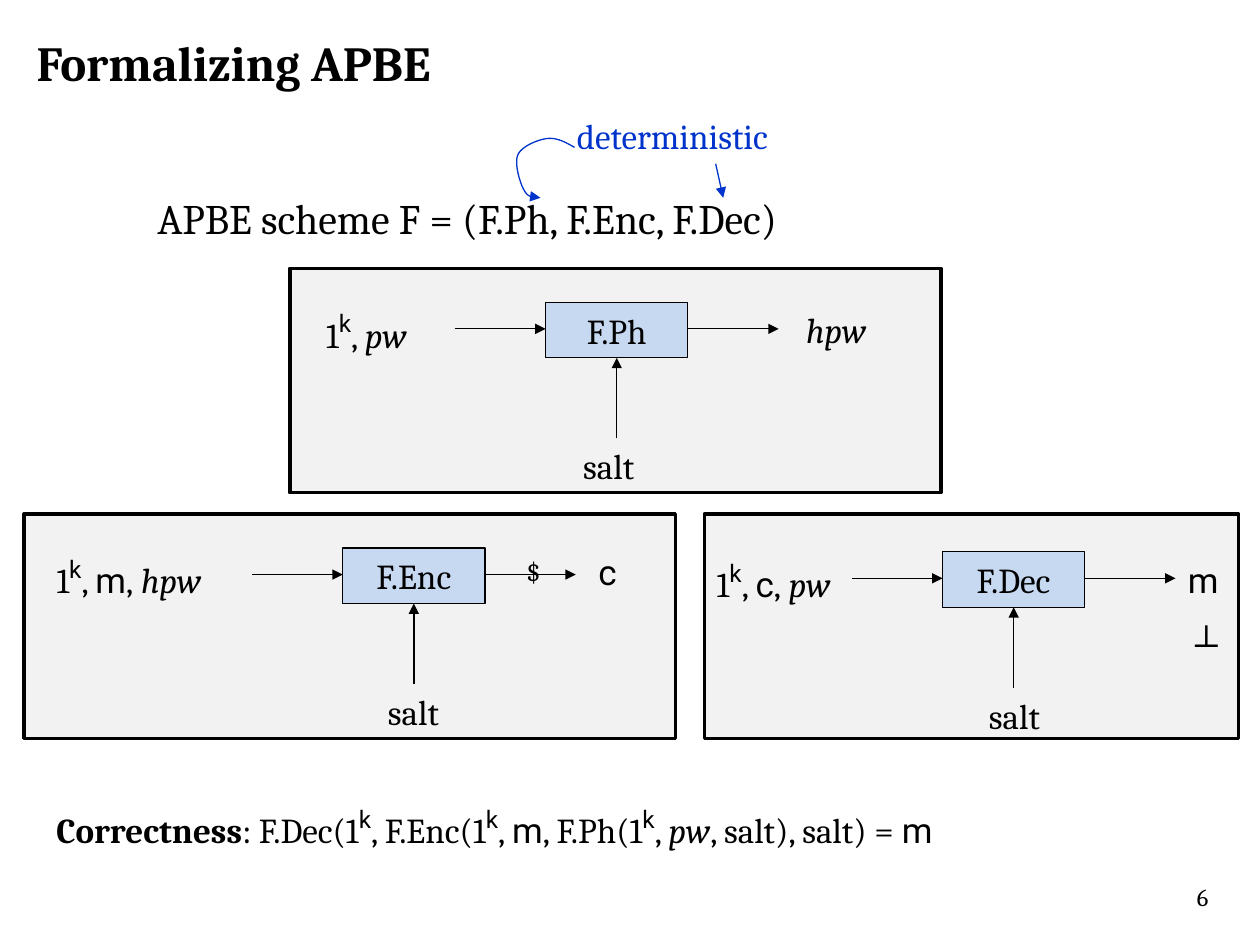
from lxml import etree
from pptx import Presentation
from pptx.dml.color import RGBColor
from pptx.enum.shapes import MSO_CONNECTOR, MSO_SHAPE
from pptx.enum.text import MSO_ANCHOR, MSO_AUTO_SIZE, PP_ALIGN
from pptx.oxml.ns import qn
from pptx.util import Inches, Pt

STRAIGHT = MSO_CONNECTOR.STRAIGHT
RECTANGLE = MSO_SHAPE.RECTANGLE
TOP = MSO_ANCHOR.TOP
NO_AUTO_SIZE = MSO_AUTO_SIZE.NONE
LEFT, CENTER = PP_ALIGN.LEFT, PP_ALIGN.CENTER

BLACK, BLUE = "000000", "0033CC"
PANEL_FILL, BOX_FILL = "F2F2F2", "C6D9F1"
SERIF, SANS = "Cambria", "Roboto"
BOX_WIDTH, TEXT_HEIGHT = 1.13, 0.44
ARROW_LENGTH = 0.72

SECURITY_PARAMETER = [("1", ""), ("k", "superscript"), (", ", "")]


def color(hex_string):
    return RGBColor.from_string(hex_string)


def curve_points(start, segments, steps=12):
    """Points along a chain of cubic curves, each (control, control, end)."""
    points = [start]
    for first, second, end in segments:
        for step in range(1, steps + 1):
            t = step / steps
            u = 1 - t
            points.append(tuple(
                u**3 * a + 3 * u * u * t * b + 3 * u * t * t * c + t**3 * d
                for a, b, c, d in zip(start, first, second, end)))
        start = end
    return points


class SlideBuilder:
    def __init__(self, slide):
        self.slide = slide
        self.shapes = slide.shapes

    def style_run(self, run, size=20, hex_color=BLACK, style=""):
        font = run.font
        font.name = SANS if style in ("sans", "superscript") else SERIF
        font.size = Pt(24 if style == "superscript" else size)
        font.color.rgb = color(hex_color)
        font.bold = style == "bold"
        font.italic = style == "italic"
        if style == "superscript":
            font._element.set("baseline", "36000")

    def add_runs(self, text_frame, parts, size=20, hex_color=BLACK, align=LEFT):
        """Fill a frame with plain text or with (text, style) parts."""
        if isinstance(parts, str):
            parts = [(parts, "")]
        paragraph = text_frame.paragraphs[0]
        paragraph.alignment = align
        for text, style in parts:
            run = paragraph.add_run()
            run.text = text
            self.style_run(run, size, hex_color, style)

    def title(self, text, left, top, width, height):
        title = self.shapes.title
        title.left, title.top = Inches(left), Inches(top)
        title.width, title.height = Inches(width), Inches(height)
        frame = title.text_frame
        frame.word_wrap = False
        frame.auto_size = NO_AUTO_SIZE
        frame.vertical_anchor = TOP
        self.add_runs(frame, [(text, "bold")], 28)

    def text(self, parts, left, top, width, height=TEXT_HEIGHT, size=20, hex_color=BLACK):
        box = self.shapes.add_textbox(
            Inches(left), Inches(top), Inches(width), Inches(height))
        box.text_frame.word_wrap = True
        self.add_runs(box.text_frame, parts, size, hex_color)

    def rectangle(self, left, top, width, height, fill, line_width, label=""):
        shape = self.shapes.add_shape(
            RECTANGLE, Inches(left), Inches(top), Inches(width), Inches(height))
        shape.shadow.inherit = False
        shape.fill.solid()
        shape.fill.fore_color.rgb = color(fill)
        shape.line.color.rgb = color(BLACK)
        shape.line.width = Pt(line_width)
        if label:
            self.add_runs(shape.text_frame, label, align=CENTER)

    def arrow_line(self, shape, hex_color):
        shape.line.color.rgb = color(hex_color)
        shape.line.width = Pt(0.75)
        line = shape.element.spPr.find(qn("a:ln"))
        etree.SubElement(line, qn("a:tailEnd"), type="triangle")

    def arrow(self, start, end, hex_color=BLACK):
        connector = self.shapes.add_connector(
            STRAIGHT, *(Inches(value) for value in (*start, *end)))
        self.arrow_line(connector, hex_color)
        etree.SubElement(connector.element.spPr, qn("a:effectLst"))

    def curved_arrow(self, points, hex_color):
        builder = self.shapes.build_freeform(
            *(Inches(value) for value in points[0]))
        builder.add_line_segments(
            [(Inches(x), Inches(y)) for x, y in points[1:]], close=False)
        shape = builder.convert_to_shape()
        shape.shadow.inherit = False
        shape.fill.background()
        self.arrow_line(shape, hex_color)

    def algorithm(self, name, left, top, inputs, input_left, input_width, salt_offset):
        """A named box with an input, an output arrow and salt from below."""
        right, center = left + BOX_WIDTH, left + BOX_WIDTH / 2
        middle, salt_top = top + 0.21, top + 1.08
        self.rectangle(left, top, BOX_WIDTH, TEXT_HEIGHT, BOX_FILL, 0.75, name)
        self.text(SECURITY_PARAMETER + inputs, input_left, top - 0.02, input_width)
        self.arrow((left - ARROW_LENGTH, middle), (left, middle))
        self.arrow((right, middle), (right + ARROW_LENGTH, middle))
        self.arrow((center, salt_top), (center, top + TEXT_HEIGHT))
        self.text("salt", left + salt_offset, salt_top, 0.73)


def main():
    presentation = Presentation()
    presentation.slide_width, presentation.slide_height = Inches(10), Inches(7.5)
    slide = presentation.slides.add_slide(presentation.slide_layouts[5])
    builder = SlideBuilder(slide)

    # Panels behind the three algorithms
    for left, top, width in ((5.59, 4.08, 4.24), (0.19, 4.08, 5.17), (2.3, 2.13, 5.17)):
        builder.rectangle(left, top, width, 1.78, PANEL_FILL, 2)

    # Title and scheme
    builder.title("Formalizing APBE", 0.19, 0.21, 3.42, 0.57)
    builder.text("APBE scheme F = (F.Ph, F.Enc, F.Dec)", 1.15, 1.48, 5.54, 0.5, 24)

    # Deterministic algorithms
    builder.text("deterministic", 4.48, 0.86, 1.92, hex_color=BLUE)
    builder.curved_arrow(curve_points((4.56, 1.17), [
        ((4.49, 1.13), (4.42, 1.09), (4.34, 1.1)),
        ((4.27, 1.11), (4.14, 1.16), (4.11, 1.23)),
        ((4.08, 1.3), (4.13, 1.46), (4.16, 1.51)),
        ((4.19, 1.57), (4.24, 1.57), (4.29, 1.57)),
    ]), BLUE)
    builder.arrow((5.68, 1.3), (5.74, 1.57), BLUE)

    # Password hashing
    builder.algorithm("F.Ph", 4.33, 2.4, [("pw", "italic")], 2.49, 1.81, 0.2)
    builder.text([("hpw", "italic")], 6.3, 2.4, 0.77)

    # Encryption
    builder.algorithm("F.Enc", 2.72, 4.35,
                      [("m", "sans"), (",", ""), (" hpw", "italic")], 0.35, 2.31, 0.26)
    builder.text([("c", "sans")], 4.65, 4.32, 0.46)
    builder.text("$", 4.08, 4.35, 0.22, 0.37, 16)

    # Decryption
    builder.algorithm("F.Dec", 7.48, 4.38,
                      [("c", "sans"), (",", ""), (" pw", "italic")], 5.59, 1.53, 0.27)
    builder.text([("m", "sans")], 9.33, 4.38, 0.46)
    builder.text("⊥", 9.36, 4.84, 0.46, 0.4, 18)

    # Correctness condition
    builder.text([
        ("Correctness", "bold"), (": F.Dec(1", ""), ("k", "superscript"),
        (", F.Enc(1", ""), ("k", "superscript"), (", ", ""), ("m", "sans"),
        (", F.Ph(1", ""), ("k", "superscript"), (", ", ""), ("pw", "italic"),
        (", salt), salt) = ", ""), ("m", "sans"),
    ], 0.35, 6.31, 8.13)

    # Slide number
    builder.text("6", 9.4, 6.95, 0.91, 0.4, 14)

    presentation.save("out.pptx")


if __name__ == "__main__":
    main()
